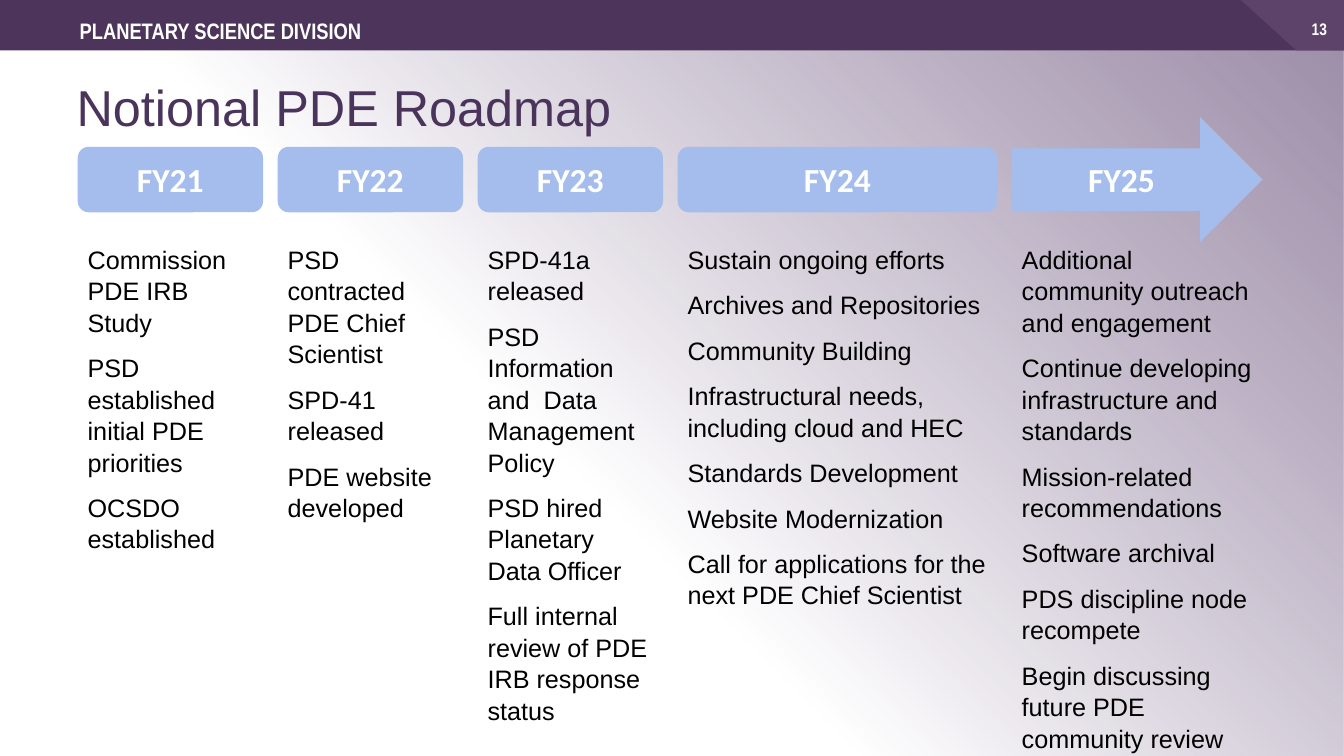
from lxml import etree
from pptx import Presentation
from pptx.dml.color import RGBColor
from pptx.enum.shapes import MSO_SHAPE as Shape
from pptx.enum.text import MSO_ANCHOR as Anchor, PP_ALIGN as Align
from pptx.oxml.ns import qn
from pptx.util import Cm, Pt

WIDE, HIGH, BAR = 33.87, 19.05, 1.27
LEFT, GAP = 1.96, 0.37
WHITE, PLUM, SKY = "FFFFFF", "4C345B", "A4BDEC"

BODY = dict(name="Arial", size=Pt(18), color="000000")
TITLE = dict(name="Arial", size=Pt(36), color="4B345B")
HEAD = dict(name="Arial Narrow", size=Pt(16), bold=True, color=WHITE)
PAGE = dict(HEAD, size=Pt(12))
YEAR = dict(name="Calibri", size=Pt(24), bold=True, color=WHITE)

# Year, column width in cm, entries
YEARS = [
    ("FY21", 4.67, ["Commission PDE IRB Study",
                    "PSD established initial PDE priorities",
                    "OCSDO established"]),
    ("FY22", 4.67, ["PSD contracted PDE Chief Scientist",
                    "SPD-41 released",
                    "PDE website developed"]),
    ("FY23", 4.67, ["SPD-41a released",
                    "PSD Information and  Data Management Policy",
                    "PSD hired Planetary Data Officer",
                    "Full internal review of PDE IRB response status"]),
    ("FY24", 8.05, ["Sustain ongoing efforts",
                    "Archives and Repositories",
                    "Community Building",
                    "Infrastructural needs, including cloud and HEC",
                    "Standards Development",
                    "Website Modernization",
                    "Call for applications for the next PDE Chief Scientist"]),
    ("FY25", 6.32, ["Additional community outreach and engagement",
                    "Continue developing infrastructure and standards",
                    "Mission-related recommendations",
                    "Software archival",
                    "PDS discipline node recompete",
                    "Begin discussing future PDE community review"]),
]


def paint(target, color):
    target.rgb = RGBColor.from_string(color)


def style(font, form):
    for key, value in form.items():
        if key == "color":
            paint(font.color, value)
        else:
            setattr(font, key, value)


def write(frame, lines, form, align=Align.LEFT, anchor=Anchor.TOP, pitch=None):
    frame.word_wrap = True
    frame.vertical_anchor = anchor
    for i, line in enumerate(lines):
        para = frame.add_paragraph() if i else frame.paragraphs[0]
        para.text = line
        para.alignment = align
        para.line_spacing = pitch
        if i:
            para.space_before = Pt(10)
        style(para.font, form)


def add_text(slide, box, lines, form, **rest):
    area = slide.shapes.add_textbox(*map(Cm, box))
    write(area.text_frame, lines, form, **rest)


def plain(shape, color):
    shape.shadow.inherit = False
    shape.line.fill.background()
    shape.fill.solid()
    paint(shape.fill.fore_color, color)


def add_shape(slide, kind, box, color):
    shape = slide.shapes.add_shape(kind, *map(Cm, box))
    plain(shape, color)
    return shape


def backdrop(slide, box):
    """Fade from translucent purple at top right to white."""
    fill = add_shape(slide, Shape.RECTANGLE, box, WHITE).fill
    fill.gradient()
    fill.gradient_angle = 225
    stops = fill.gradient_stops
    for stop, (place, color) in zip(stops, [(0, "887596"), (0.59, WHITE)]):
        stop.position = place
        paint(stop.color, color)
    tint = fill._xPr.find(".//" + qn("a:srgbClr"))
    etree.SubElement(tint, qn("a:alpha"), val="83000")


def banner(slide, box):
    x, y, w, h = box
    add_shape(slide, Shape.RECTANGLE, box, PLUM)
    right, low = x + w, y + h
    pen = slide.shapes.build_freeform(Cm(right - 2.6), Cm(y), scale=1.0)
    pen.add_line_segments([(Cm(a), Cm(b)) for a, b in
                           [(right, y), (right, low), (right - 1.2, low)]])
    plain(pen.convert_to_shape(), "5D4269")
    add_text(slide, (right - 7.8, y + 0.22, 7.62, 1.02), ["13"], PAGE,
             align=Align.RIGHT, anchor=Anchor.MIDDLE)
    add_text(slide, (x + 1.76, y + 0.3, 8.92, 0.94),
             ["PLANETARY SCIENCE DIVISION"], HEAD)


def column(slide, box, year, items, last):
    x, y, w, h = box
    tall = 1.65
    kind, grow = (Shape.RIGHT_ARROW, 0.75) if last else (Shape.ROUNDED_RECTANGLE, 0)
    sign = add_shape(slide, kind, (x, y - grow, w, tall + 2 * grow), SKY)
    write(sign.text_frame, [year], YEAR, Align.CENTER, Anchor.MIDDLE)
    add_text(slide, (x, y + 2.3, w, h - 2.3), items, BODY, pitch=1.04)


def roadmap(slide, box):
    x, y, _, h = box
    for year, wide, items in YEARS:
        column(slide, (x, y, wide, h), year, items, year == YEARS[-1][0])
        x += wide + GAP


def main():
    deck = Presentation()
    deck.slide_width, deck.slide_height = Cm(WIDE), Cm(HIGH)
    slide = deck.slides.add_slide(deck.slide_layouts[6])
    backdrop(slide, (0, 0, WIDE, HIGH))
    banner(slide, (0, 0, WIDE, BAR))
    add_text(slide, (1.68, 1.96, 28.88, 1.65), ["Notional PDE Roadmap"], TITLE,
             anchor=Anchor.MIDDLE, pitch=0.9)
    roadmap(slide, (LEFT, 3.7, WIDE - 2 * LEFT, 15.1))
    deck.save("out.pptx")


if __name__ == "__main__":
    main()
